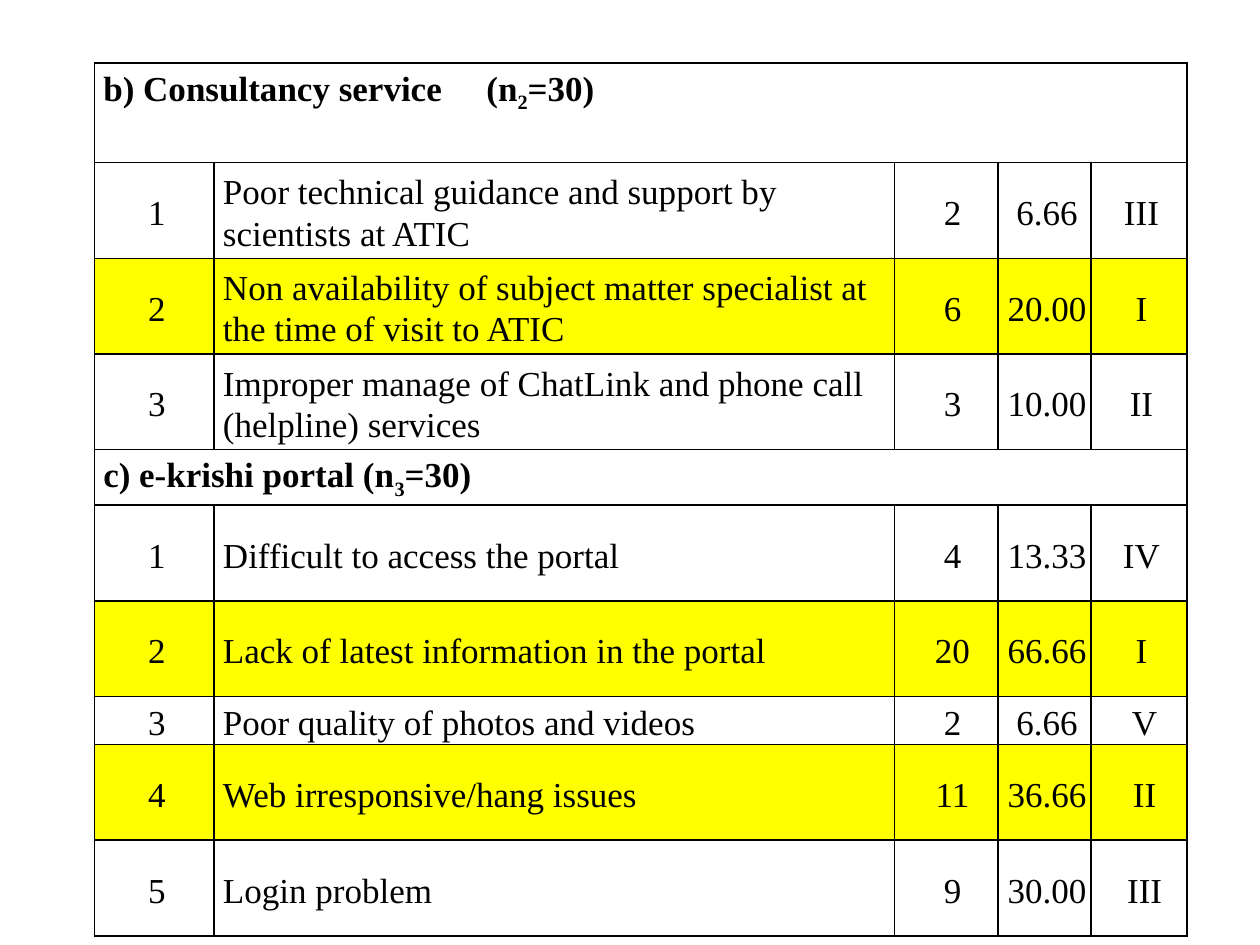
from lxml.etree import SubElement
from pptx import Presentation
from pptx.dml.color import RGBColor
from pptx.enum.text import MSO_ANCHOR, PP_ALIGN
from pptx.oxml.ns import qn
from pptx.util import Inches, Pt


def paint(color, value):
    color.rgb = RGBColor.from_string(value)


def add_borders(cell, value):
    properties = cell._tc.get_or_add_tcPr()
    for side in ("lnL", "lnR", "lnT", "lnB"):
        line = SubElement(properties, qn(f"a:{side}"), w=str(Pt(1)))
        fill = SubElement(line, qn("a:solidFill"))
        SubElement(fill, qn("a:srgbClr"), val=value)


rows = [
    ("b) Consultancy service\t(n", "2", "=30)"),
    ("1", "Poor technical guidance and support by scientists at ATIC", "2", "6.66", "III"),
    ("2", "Non availability of subject matter specialist at the time of visit to ATIC", "6", "20.00", "I"),
    ("3", "Improper manage of ChatLink and phone call (helpline) services", "3", "10.00", "II"),
    ("c) e-krishi portal (n", "3", "=30)"),
    ("1", "Difficult to access the portal", "4", "13.33", "IV"),
    ("2", "Lack of latest information in the portal", "20", "66.66", "I"),
    ("3", "Poor quality of photos and videos", "2", "6.66", "V"),
    ("4", "Web irresponsive/hang issues", "11", "36.66", "II"),
    ("5", "Login problem", "9", "30.00", "III"),
]
column_widths = [0.95, 5.4, 0.82, 0.74, 0.76]
row_heights = [0.79, 0.76, 0.76, 0.76, 0.44, 0.76, 0.76, 0.38, 0.76, 0.76]
highlighted_rows = {2, 6, 8}
first_shifted_rank = 7

deck = Presentation()
deck.slide_width, deck.slide_height = Inches(10), Inches(7.5)
page = deck.slides.add_slide(deck.slide_layouts[6])
frame = page.shapes.add_table(
    len(rows), len(column_widths), Inches(0.75), Inches(0.5),
    Inches(sum(column_widths)), Inches(sum(row_heights)),
)
table = frame.table
table.first_row = table.horz_banding = False
for column, width in zip(table.columns, column_widths):
    column.width = Inches(width)

for row_index, values in enumerate(rows):
    table.rows[row_index].height = Inches(row_heights[row_index])
    heading = len(values) == 3
    if heading:
        table.cell(row_index, 0).merge(table.cell(row_index, len(column_widths) - 1))

    for column_index in range(len(column_widths)):
        cell = table.cell(row_index, column_index)
        add_borders(cell, "000000")
        if row_index in highlighted_rows:
            cell.fill.solid()
            paint(cell.fill.fore_color, "FFFF00")
        else:
            cell.fill.background()
        cell.margin_left = Inches(0.07)
        cell.margin_top = cell.margin_right = Inches(0.03)
        cell.margin_bottom = 0
        cell.vertical_anchor = MSO_ANCHOR.TOP if heading else MSO_ANCHOR.MIDDLE

        para = cell.text_frame.paragraphs[0]
        para.line_spacing = 1.07
        para.space_after = Pt(8)
        if heading and "\t" in values[0]:
            tabs = SubElement(para._p.get_or_add_pPr(), qn("a:tabLst"))
            SubElement(tabs, qn("a:tab"), pos=str(Inches(3.04)), algn="l")
        para.font.name = "Times New Roman"
        para.font.size = Pt(20)
        para.font.bold = heading
        paint(para.font.color, "000000")

        if heading:
            if column_index == 0:
                for part_index, part in enumerate(values):
                    span = para.add_run()
                    span.text = part
                    if part_index == 1:
                        span.font._element.set("baseline", "-25000")
            continue

        para.add_run().text = values[column_index]
        if column_index != 1:
            para.alignment = PP_ALIGN.CENTER
        if column_index == 2:
            para._p.get_or_add_pPr().set("marL", str(Inches(0.06)))
        if column_index == 4 and row_index >= first_shifted_rank:
            para._p.get_or_add_pPr().set("marL", str(Inches(0.05)))

deck.save("out.pptx")
